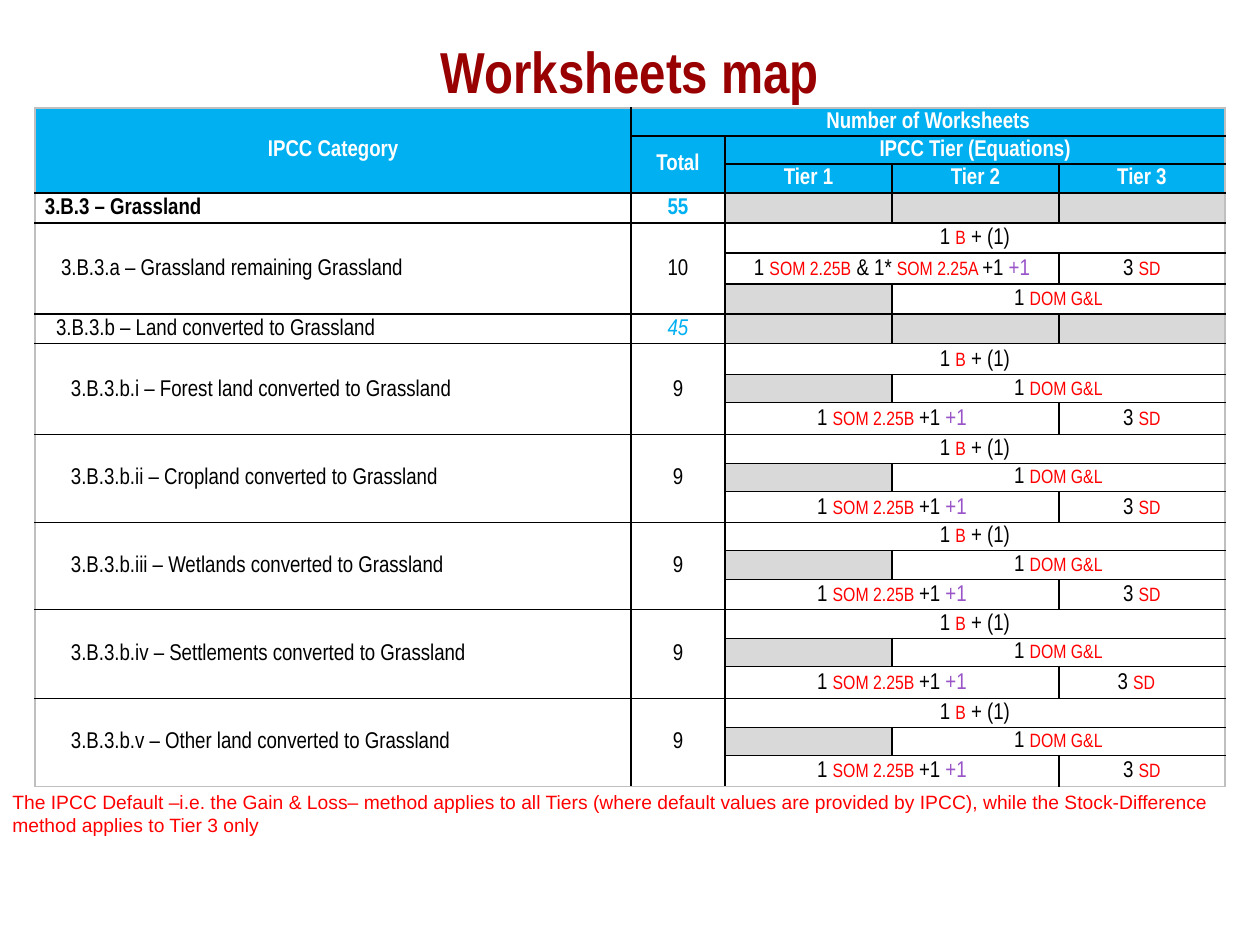
from lxml.etree import SubElement
from pptx import Presentation
from pptx.dml.color import RGBColor as RGB
from pptx.enum.text import MSO_ANCHOR as Anchor, PP_ALIGN as Align
from pptx.oxml.ns import qn
from pptx.util import Emu, Pt

PX = 914400 // 126
DARK_RED = RGB(0x99, 0x00, 0x02)
BLUE = RGB(0x00, 0xB0, 0xF0)
WHITE = RGB(0xFF, 0xFF, 0xFF)
BLACK = RGB(0x00, 0x00, 0x00)
GREY = RGB(0xD9, 0xD9, 0xD9)
EDGE = RGB(0xBF, 0xBF, 0xBF)
RED = RGB(0xFF, 0x00, 0x00)
PURPLE = RGB(0x99, 0x54, 0xC8)
NARROW = "Arial Narrow"

WIDTHS = [596, 94, 167, 167, 166]
HEIGHTS = [28, 28, 29, 30, 30, 31, 30, 30, 31, 28, 32, 29,
           28, 31, 28, 29, 30, 29, 28, 32, 29, 28, 31]

# Each cell: row, column, rows spanned, columns spanned, runs of (text, colour)
heads = [
    (0, 0, 3, 1, "IPCC Category"),
    (0, 1, 1, 4, "Number of Worksheets"),
    (1, 1, 2, 1, "Total"),
    (1, 2, 1, 3, "IPCC Tier (Equations)"),
    (2, 2, 1, 1, "Tier 1"),
    (2, 3, 1, 1, "Tier 2"),
    (2, 4, 1, 1, "Tier 3"),
]
cells = [(*place, [(text, WHITE)]) for *place, text in heads]

# Each category: first row, rows spanned, left indent, label, total, total colour
groups = [
    (3, 1, 10, "3.B.3 – Grassland", "55", BLUE),
    (4, 3, 26, "3.B.3.a – Grassland remaining Grassland", "10", BLACK),
    (7, 1, 21, "3.B.3.b – Land converted to Grassland", "45", BLUE),
]
lands = ["i – Forest land", "ii – Cropland", "iii – Wetlands",
         "iv – Settlements", "v – Other land"]
for i, land in enumerate(lands):
    groups.append((8 + 3 * i, 3, 36, f"3.B.3.b.{land} converted to Grassland",
                   "9", BLACK))

GAIN = [("1 ", BLACK), ("B", RED), (" + (1)", BLACK)]
DOM = [("1 ", BLACK), ("DOM G&L", RED)]
SOM = [("1 ", BLACK), ("SOM 2.25B ", RED), ("+1 ", BLACK), ("+1", PURPLE)]
BOTH = [("1 ", BLACK), ("SOM 2.25B", RED), (" & 1* ", BLACK),
        ("SOM 2.25A ", RED), ("+1 ", BLACK), ("+1", PURPLE)]
STOCK = [("3 ", BLACK), ("SD", RED)]

indents = {}
for top, span, indent, label, total, color in groups:
    indents[top] = indent
    cells += [(top, 0, span, 1, [(label, BLACK)]),
              (top, 1, span, 1, [(total, color)])]
    if span == 3:
        remain = top == 4
        som, dom = (top + 1, top + 2) if remain else (top + 2, top + 1)
        cells += [(top, 2, 1, 3, GAIN),
                  (som, 2, 1, 2, BOTH if remain else SOM),
                  (som, 4, 1, 1, STOCK),
                  (dom, 3, 1, 2, DOM)]


def style(run, size, color, name=NARROW, bold=False):
    font = run.font
    font.size, font.name, font.bold = Pt(size), name, bold
    font.color.rgb = color


def border(cell, side, color):
    line = SubElement(cell._tc.get_or_add_tcPr(), qn(f"a:ln{side}"), w="12700")
    fill = SubElement(line, qn("a:solidFill"))
    SubElement(fill, qn("a:srgbClr"), val=str(color))


deck = Presentation()
deck.slide_width, deck.slide_height = Emu(1260 * PX), Emu(945 * PX)
slide = deck.slides.add_slide(deck.slide_layouts[5])

title = slide.shapes.title
title.left, title.top, title.width, title.height = 0, 32 * PX, 1260 * PX, 77 * PX
frame = title.text_frame
frame.text = "Worksheets map"
frame.vertical_anchor = Anchor.MIDDLE
frame.paragraphs[0].alignment = Align.CENTER
style(frame.paragraphs[0].runs[0], 33, DARK_RED, bold=True)

table = slide.shapes.add_table(
    len(HEIGHTS), len(WIDTHS), 35 * PX, 108 * PX,
    sum(WIDTHS) * PX, sum(HEIGHTS) * PX).table
table.first_row = table.horz_banding = False
for column, width in zip(table.columns, WIDTHS):
    column.width = width * PX
for row, height in zip(table.rows, HEIGHTS):
    row.height = height * PX

for r, c, down, across, runs in cells:
    if down * across > 1:
        table.cell(r, c).merge(table.cell(r + down - 1, c + across - 1))
content = {(r, c): runs for r, c, down, across, runs in cells}

for r in range(len(HEIGHTS)):
    for c in range(len(WIDTHS)):
        cell = table.cell(r, c)
        cell.vertical_anchor = Anchor.MIDDLE
        cell.margin_left = cell.margin_right = cell.margin_top = PX
        cell.margin_bottom = 0
        last_col = c + cell.span_width == len(WIDTHS)
        last_row = r + cell.span_height == len(HEIGHTS)
        for side, outer in (("L", c == 0), ("R", last_col),
                            ("T", r == 0), ("B", last_row)):
            border(cell, side, EDGE if outer else BLACK)
        runs = content.get((r, c), [])
        blank = not runs and not cell.is_spanned
        cell.fill.solid()
        cell.fill.fore_color.rgb = BLUE if r < 3 else GREY if blank else WHITE

        para = cell.text_frame.paragraphs[0]
        if not runs:
            para._p.get_or_add_endParaRPr().set("sz", "1100")
            continue
        para.alignment = Align.CENTER
        if HEIGHTS[r] >= 30:
            para.line_spacing = 1.07
        if c == 0 and r in indents:
            para.alignment = Align.LEFT
            cell.margin_left = indents[r] * PX
        for text, color in runs:
            run = para.add_run()
            run.text = text
            style(run, 11 if color == RED else 13, color,
                  bold=r < 3 or (r == 3 and c < 2))
            run.font.italic = text == "45"
table.cell(19, 4).margin_right = 12 * PX

note = slide.shapes.add_textbox(0, 784 * PX, 1260 * PX, 59 * PX).text_frame
note.word_wrap = True
note.text = ("The IPCC Default –i.e. the Gain & Loss– method applies to all Tiers "
             "(where default values are provided by IPCC), while the "
             "Stock-Difference method applies to Tier 3 only")
style(note.paragraphs[0].runs[0], 11, RED, "Arial")

deck.save("out.pptx")
